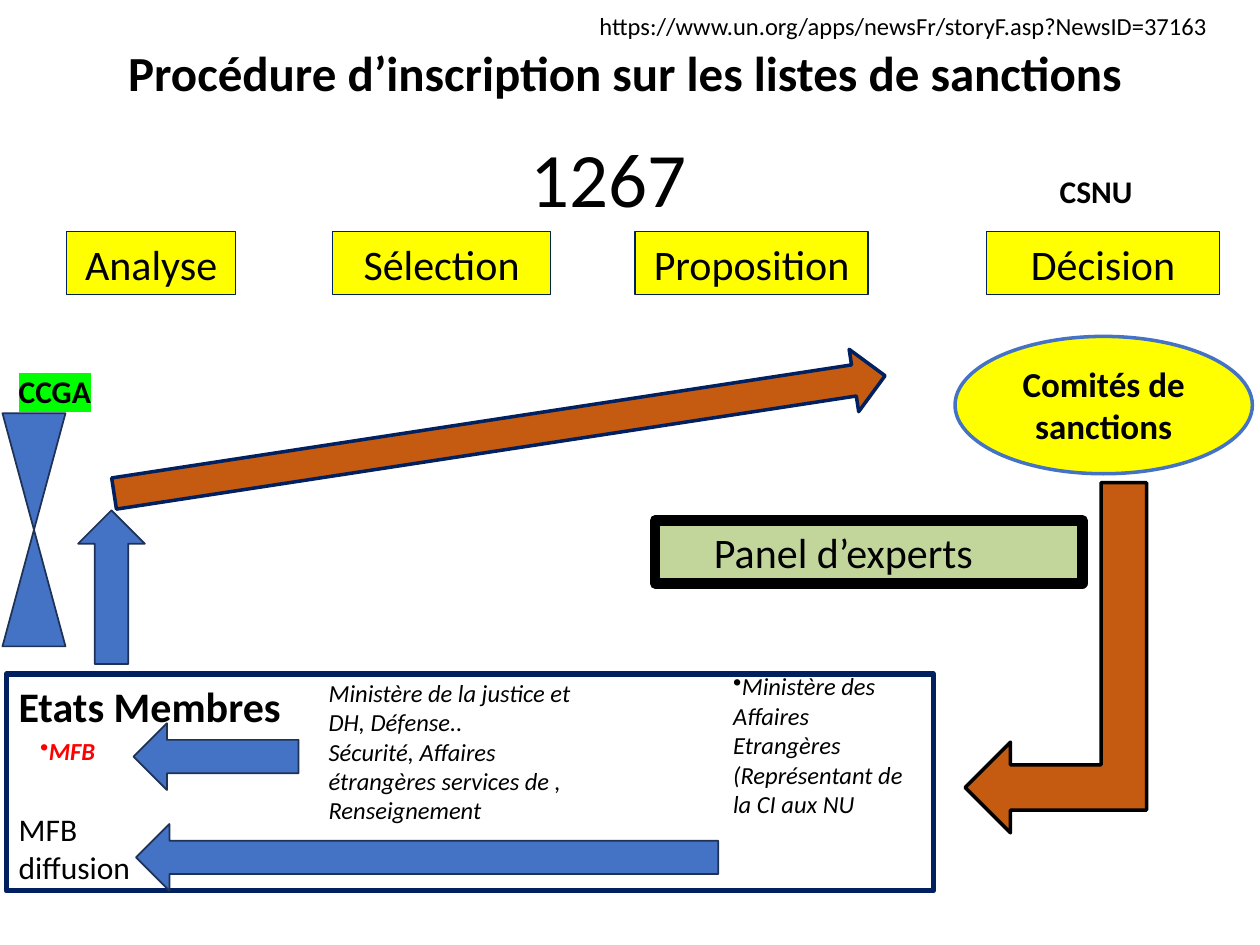
import pptx
import pptx.util
import pptx.dml.color
import pptx.enum.shapes
import pptx.enum.text
import pptx.oxml
import pptx.oxml.ns

Inches = pptx.util.Inches
SHAPE = pptx.enum.shapes.MSO_SHAPE
ALIGN = pptx.enum.text.PP_ALIGN
ANCHOR = pptx.enum.text.MSO_ANCHOR

BLACK, NAVY, YELLOW, BLUE, RUST = "000000", "002060", "FFFF00", "4472C4", "C55A11"
BLUE_EDGE = "1E3256"

STEP_TOP, STEP_HEIGHT = 1.84, 0.5
steps = [
    ("Analyse", 0.53, 1.34),
    ("Sélection", 2.64, 1.73),
    ("Proposition", 5.04, 1.85),
    ("Décision", 7.83, 1.85),
]

boxes = [
    (["Panel d’experts"], SHAPE.RECTANGLE, (5.2, 4.13, 3.39, 0.5), "C2D69B", BLACK, 6,
     {"size": 24, "align": ALIGN.CENTER, "margins": (0.1, 0.05, 0.5, 0.05)}),
    (["Etats Membres"], SHAPE.RECTANGLE, (0.05, 5.35, 7.36, 1.72), None, NAVY, 3,
     {"size": 24, "bold": True}),
    (["Comités de sanctions"], SHAPE.OVAL, (7.58, 2.67, 2.36, 1.09), YELLOW, BLUE, 2,
     {"size": 20, "bold": True, "align": ALIGN.CENTER, "margins": (0.05,) * 4}),
]

flows = [
    (SHAPE.RIGHT_ARROW, (0.87, 3.2, 6.19, 0.5), RUST, NAVY, 2, 351.3, False),
    (SHAPE.BENT_UP_ARROW, (6.99, 4.5, 2.78, 1.44), RUST, BLACK, 2, 270, True),
    (SHAPE.LEFT_ARROW, (1.06, 5.74, 1.31, 0.53), BLUE, BLUE_EDGE, 1, 0, False),
    (SHAPE.LEFT_ARROW, (1.08, 6.54, 4.62, 0.53), BLUE, BLUE_EDGE, 1, 0, False),
    (SHAPE.FLOWCHART_COLLATE, (0.02, 3.28, 0.5, 1.85), BLUE, BLUE_EDGE, 1, 0, False),
    (SHAPE.UP_ARROW, (0.62, 4.05, 0.53, 1.22), BLUE, BLUE_EDGE, 1, 0, False),
]

labels = [
    (["Procédure d’inscription sur les listes de sanctions"], (0.53, 0.28, 8.86, 0.58),
     {"size": 28, "bold": True, "align": ALIGN.CENTER, "anchor": ANCHOR.MIDDLE,
      "margins": (0.06,) * 4}),
    (["https://www.un.org/apps/newsFr/storyF.asp?NewsID=37163"], (4.66, 0.04, 5.34, 0.34),
     {"size": 14}),
    (["1267"], (4.16, 0.99, 1.35, 0.84), {"size": 44, "margins": (0.05,) * 4}),
    (["CSNU"], (7.92, 1.32, 1.34, 0.4),
     {"size": 18, "bold": True, "margins": (0.49, 0.05, 0.1, 0.05)}),
    (["CCGA"], (0.05, 2.9, 1.03, 0.4), {"size": 18, "bold": True, "highlight": "00FF00"}),
    (["MFB"], (0.22, 5.79, 2.5, 0.34),
     {"size": 14, "bold": True, "italic": True, "color": "FF0000", "bullet": "•"}),
    (["Ministère de la justice et DH, Défense..",
      "Sécurité, Affaires étrangères services de , Renseignement"],
     (2.51, 5.33, 2.24, 1.99), {"size": 14, "italic": True}),
    (["Ministère des Affaires Etrangères (Représentant de la CI aux NU"],
     (5.72, 5.28, 1.61, 1.28), {"size": 14, "italic": True, "bullet": "•"}),
    (["MFB diffusion"], (0.05, 6.38, 1.11, 0.71), {"size": 18}),
]


def rgb(code):
    return pptx.dml.color.RGBColor.from_string(code)


def add_bullet(paragraph, mark):
    properties = paragraph._p.get_or_add_pPr()
    properties.set("marL", "0")
    properties.set("indent", str(-Inches(0.16)))
    properties.append(pptx.oxml.parse_xml(
        f'<a:buChar {pptx.oxml.ns.nsdecls("a")} char="{mark}"/>'))


def add_highlight(run, code):
    fill = run._r.rPr.find(pptx.oxml.ns.qn("a:solidFill"))
    fill.addnext(pptx.oxml.parse_xml(
        f'<a:highlight {pptx.oxml.ns.nsdecls("a")}><a:srgbClr val="{code}"/></a:highlight>'))


def write(holder, lines, style):
    frame = holder.text_frame
    margins = style.get("margins", (0.1, 0.05, 0.1, 0.05))
    frame_format = {"word_wrap": True, "vertical_anchor": style.get("anchor", ANCHOR.TOP)}
    for side, margin in zip(("left", "top", "right", "bottom"), margins):
        frame_format[f"margin_{side}"] = Inches(margin)
    for name, value in frame_format.items():
        setattr(frame, name, value)
    font_format = {"name": "Calibri", "size": pptx.util.Pt(style["size"]),
                   "bold": style.get("bold", False), "italic": style.get("italic", False)}
    for index, line in enumerate(lines):
        paragraph = frame.add_paragraph() if index else frame.paragraphs[0]
        paragraph.alignment = style.get("align", ALIGN.LEFT)
        run = paragraph.add_run()
        run.text = line
        for name, value in font_format.items():
            setattr(run.font, name, value)
        run.font.color.rgb = rgb(style.get("color", BLACK))
        if "bullet" in style:
            add_bullet(paragraph, style["bullet"])
        if "highlight" in style:
            add_highlight(run, style["highlight"])


def draw(slide, kind, place, fill, edge, weight):
    figure = slide.shapes.add_shape(kind, *map(Inches, place))
    figure.shadow.inherit = False
    if fill:
        figure.fill.solid()
        figure.fill.fore_color.rgb = rgb(fill)
    else:
        figure.fill.background()
    figure.line.color.rgb = rgb(edge)
    figure.line.width = pptx.util.Pt(weight)
    return figure


def main():
    deck = pptx.Presentation()
    deck.slide_width, deck.slide_height = Inches(10), Inches(7.5)
    slide = deck.slides.add_slide(deck.slide_layouts[6])

    for step, left, width in steps:
        place = (left, STEP_TOP, width, STEP_HEIGHT)
        box = draw(slide, SHAPE.RECTANGLE, place, YELLOW, NAVY, 0.75)
        write(box, [step], {"size": 24, "align": ALIGN.CENTER})

    for lines, kind, place, fill, edge, weight, style in boxes:
        write(draw(slide, kind, place, fill, edge, weight), lines, style)

    for kind, place, fill, edge, weight, turn, flipped in flows:
        flow = draw(slide, kind, place, fill, edge, weight)
        flow.rotation = turn
        if flipped:
            flow._element.spPr.xfrm.set("flipH", "1")

    for lines, place, style in labels:
        write(slide.shapes.add_textbox(*map(Inches, place)), lines, style)

    deck.save("out.pptx")


if __name__ == "__main__":
    main()
